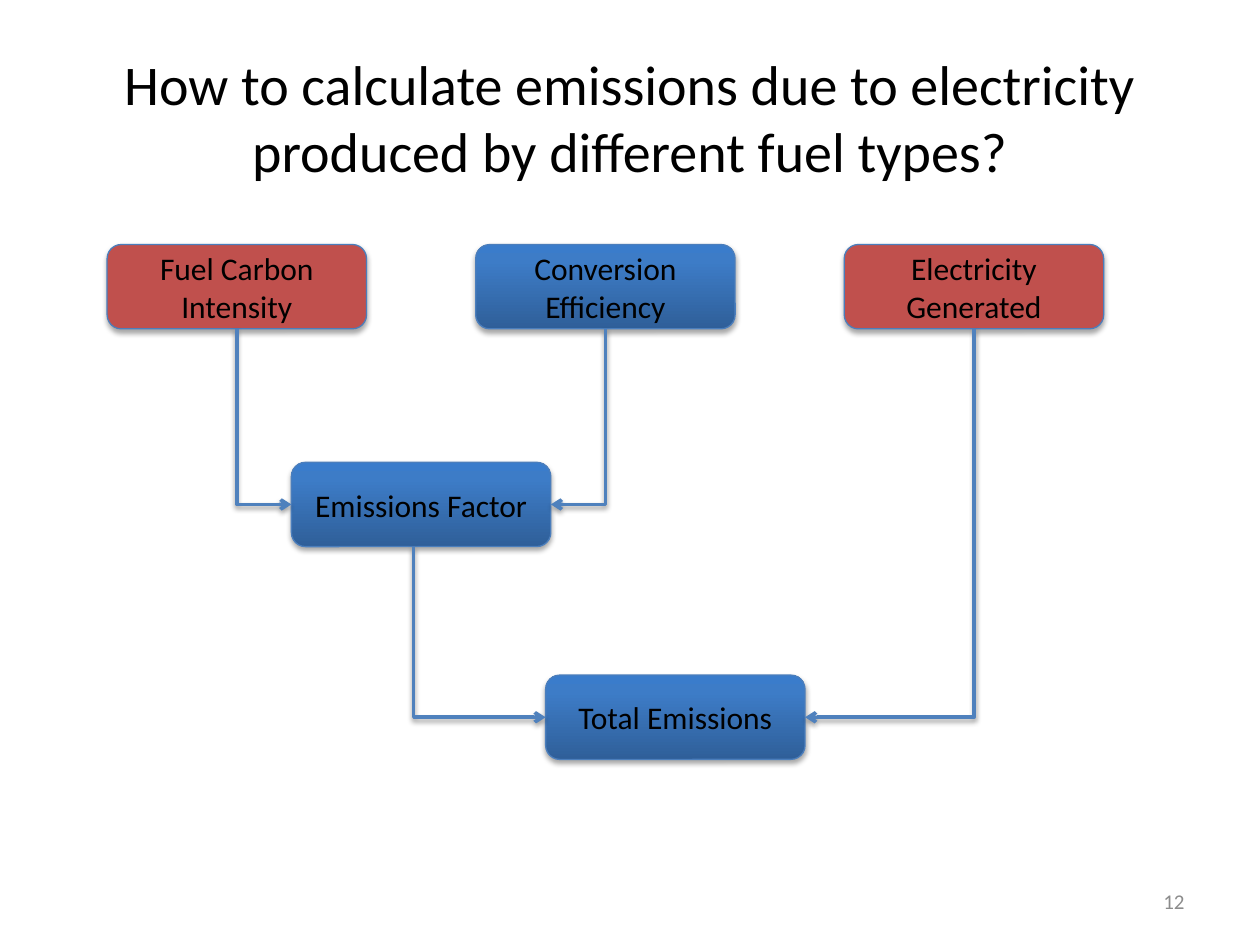
from copy import deepcopy

from pptx import Presentation
from pptx import util as u
from pptx.dml.color import RGBColor
from pptx.enum import shapes, text
from pptx.oxml import parse_xml
from pptx.oxml.ns import nsdecls, qn

BLACK = RGBColor(0x00, 0x00, 0x00)
GREY = RGBColor(0x8C, 0x8C, 0x8C)
RED = RGBColor(0xC0, 0x50, 0x4D)
OUTLINE = RGBColor(0x4B, 0x7E, 0xBC)
ARROW = RGBColor(0x4F, 0x81, 0xBD)
BLUE_STOPS = [
    (0, RGBColor(0x2F, 0x5F, 0x99)),
    (0.8, RGBColor(0x3D, 0x7C, 0xC7)),
    (1, RGBColor(0x3A, 0x7C, 0xCB)),
]

BOX_WIDTH, BOX_HEIGHT = u.Cm(5.23), u.Cm(1.7)
LEFT, COLUMN_STEP = 2.16, 7.43
TOP_ROW, FACTOR_ROW, TOTAL_ROW = 4.93, 9.32, 13.61


def write_text(shape, content, size, color, alignment):
    frame = shape.text_frame
    frame.text = content
    frame_format = {
        "word_wrap": True,
        "auto_size": text.MSO_AUTO_SIZE.NONE,
        "vertical_anchor": text.MSO_ANCHOR.MIDDLE,
    }
    for name, value in frame_format.items():
        setattr(frame, name, value)
    paragraph = frame.paragraphs[0]
    paragraph.alignment = alignment
    font = paragraph.runs[0].font
    for name, value in {"name": "Calibri", "size": u.Pt(size)}.items():
        setattr(font, name, value)
    font.color.rgb = color


def add_shadow(shape, distance, opacity):
    """Cast a soft black shadow downwards; opacity is in percent."""
    shape._element.spPr.append(parse_xml(
        f'<a:effectLst {nsdecls("a")}>'
        f'<a:outerShdw blurRad="{u.Pt(3.1)}" dist="{u.Pt(distance)}" dir="5400000" rotWithShape="0">'
        f'<a:srgbClr val="000000"><a:alpha val="{opacity * 1000}"/></a:srgbClr>'
        '</a:outerShdw></a:effectLst>'
    ))


def fill_blue(shape):
    """Fill with the three-stop gradient, darkest at the bottom."""
    fill = shape.fill
    fill.gradient()
    fill.gradient_angle = 90
    stop_list = shape._element.spPr.find(".//" + qn("a:gsLst"))
    stop_list.append(deepcopy(stop_list[-1]))
    for stop, (position, color) in zip(fill.gradient_stops, BLUE_STOPS):
        stop.position = position
        stop.color.rgb = color


def add_box(slide, content, left, top, color=None):
    """Add a rounded box, blue gradient unless a colour is given."""
    box = slide.shapes.add_shape(
        shapes.MSO_SHAPE.ROUNDED_RECTANGLE, u.Cm(left), u.Cm(top), BOX_WIDTH, BOX_HEIGHT)
    if color is None:
        fill_blue(box)
    else:
        box.fill.solid()
        box.fill.fore_color.rgb = color
    box.line.color.rgb = OUTLINE
    box.line.width = u.Pt(0.75)
    add_shadow(box, 1.8, 35)
    write_text(box, content, 18, BLACK, text.PP_ALIGN.CENTER)
    return box


def add_arrow(slide, source, target, shift=0):
    """Run down from the source's bottom, then sideways into the target's near side."""
    start_x = source.left + source.width // 2 + shift
    start_y = source.top + source.height
    rightward = start_x < target.left
    end_x = target.left if rightward else target.left + target.width
    end_y = target.top + target.height // 2

    # The one-bend shape starts sideways, so it is laid out turned by a quarter.
    center_x, center_y = (start_x + end_x) // 2, (start_y + end_y) // 2
    half_drop, half_run = (end_y - start_y) // 2, abs(end_x - start_x) // 2
    direction = -1 if rightward else 1
    arrow = slide.shapes.add_connector(
        shapes.MSO_CONNECTOR.ELBOW,
        center_x - direction * half_drop, center_y - half_run,
        center_x + direction * half_drop, center_y + half_run)
    properties = arrow._element.spPr
    properties.find(qn("a:prstGeom")).set("prst", "bentConnector2")
    properties.find(qn("a:xfrm")).set("rot", str((270 if rightward else 90) * 60000))
    arrow.line.color.rgb = ARROW
    arrow.line.width = u.Pt(2)
    properties.find(qn("a:ln")).append(parse_xml(f'<a:tailEnd {nsdecls("a")} type="arrow"/>'))
    add_shadow(arrow, 1.6, 38)


def add_title(slide, content):
    title = slide.shapes.title
    position = {"left": 1.27, "top": 0.76, "width": 22.86, "height": 3.18}
    for name, value in position.items():
        setattr(title, name, u.Cm(value))
    write_text(title, content, 32, BLACK, text.PP_ALIGN.CENTER)


def add_slide_number(slide, number):
    box = slide.shapes.add_textbox(u.Cm(18.2), u.Cm(17.65), u.Cm(5.93), u.Cm(1.02))
    write_text(box, number, 12, GREY, text.PP_ALIGN.RIGHT)


def main():
    presentation = Presentation()
    presentation.slide_width, presentation.slide_height = u.Cm(25.4), u.Cm(19.05)
    slide = presentation.slides.add_slide(presentation.slide_layouts[5])

    add_title(slide, "How to calculate emissions due to electricity produced by different fuel types?")
    add_slide_number(slide, "12")

    total = add_box(slide, "Total Emissions", 11, TOTAL_ROW)
    factor = add_box(slide, "Emissions Factor", LEFT + COLUMN_STEP / 2, FACTOR_ROW)
    efficiency = add_box(slide, "Conversion Efficiency", LEFT + COLUMN_STEP, TOP_ROW)
    intensity = add_box(slide, "Fuel Carbon Intensity", LEFT, TOP_ROW, RED)
    generated = add_box(slide, "Electricity Generated", LEFT + 2 * COLUMN_STEP, TOP_ROW, RED)

    add_arrow(slide, intensity, factor)
    add_arrow(slide, factor, total, shift=u.Cm(-0.15))
    add_arrow(slide, generated, total)
    add_arrow(slide, efficiency, factor)

    presentation.save("out.pptx")


if __name__ == "__main__":
    main()
